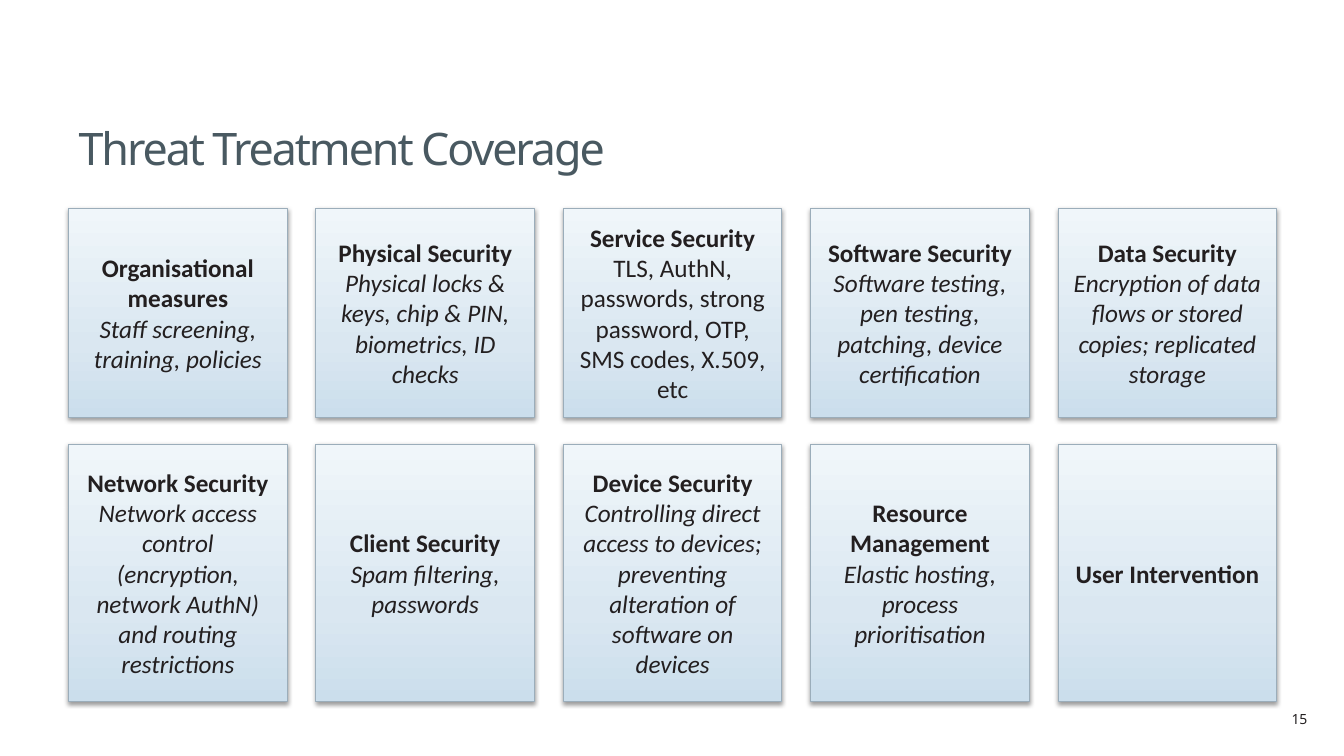
from copy import deepcopy

from lxml.etree import SubElement
from pptx import Presentation
from pptx.dml.color import RGBColor
from pptx.enum.shapes import MSO_SHAPE
from pptx.enum.text import MSO_ANCHOR, MSO_AUTO_SIZE, PP_ALIGN
from pptx.oxml.ns import qn
from pptx.util import Pt

# Heading, detail, whether the detail is italic
MEASURES = [
    [
        ("Organisational measures", "Staff screening, training, policies", True),
        ("Physical Security", "Physical locks & keys, chip & PIN, biometrics, ID checks", True),
        ("Service Security", "TLS, AuthN, passwords, strong password, OTP, SMS codes, X.509, etc", False),
        ("Software Security", "Software testing, pen testing, patching, device certification", True),
        ("Data Security", "Encryption of data flows or stored copies; replicated storage", True),
    ],
    [
        ("Network Security", "Network access control (encryption, network AuthN) and routing restrictions", True),
        ("Client Security", "Spam filtering, passwords", True),
        ("Device Security", "Controlling direct access to devices; preventing alteration of software on devices", True),
        ("Resource Management", "Elastic hosting, process prioritisation", True),
        ("User Intervention", "", False),
    ],
]
ROWS = [(149, 149), (317.5, 183.6)]  # top and height
LEFT, PITCH, CARD_WIDTH = 49, 176.7, 156.2


def colour(hex_string):
    return RGBColor.from_string(hex_string)


class ThreatSlide:
    HEADING_FONT, BODY_FONT = "Noto Sans", "Calibri"
    INK, TITLE_INK, OUTLINE = "231F20", "495961", "9BADBA"
    GRADIENT = [(0, "CBDEEC"), (0.35, "DAE7F1"), (1, "F0F6FA")]

    def __init__(self, presentation):
        self.slide = presentation.slides.add_slide(presentation.slide_layouts[5])

    def style(self, paragraph, name, size, ink, align, bold=False, italic=False):
        paragraph.alignment = align
        font = paragraph.font
        font.name, font.size, font.bold, font.italic = name, Pt(size), bold, italic
        font.color.rgb = colour(ink)

    def title(self, text, left, top, width, height):
        title = self.slide.shapes.title
        title.left, title.top, title.width, title.height = map(Pt, (left, top, width, height))
        frame = title.text_frame
        frame.text = text
        frame.auto_size = MSO_AUTO_SIZE.NONE
        frame.vertical_anchor = MSO_ANCHOR.BOTTOM
        heading = frame.paragraphs[0]
        self.style(heading, self.HEADING_FONT, 32, self.TITLE_INK, PP_ALIGN.LEFT)
        heading.runs[0].font._element.set("spc", "-150")

    def page_number(self, text, left, top, width, height):
        number = self.slide.shapes.add_textbox(*map(Pt, (left, top, width, height)))
        frame = number.text_frame
        frame.word_wrap = True
        frame.text = text
        self.style(frame.paragraphs[0], self.HEADING_FONT, 10, self.INK, PP_ALIGN.RIGHT)

    def card(self, heading, detail, italic, left, top, width, height):
        card = self.slide.shapes.add_shape(
            MSO_SHAPE.RECTANGLE, *map(Pt, (left, top, width, height)))
        card.line.color.rgb = colour(self.OUTLINE)
        card.line.width = Pt(0.75)
        self.shade(card)
        self.cast_shadow(card)

        frame = card.text_frame
        frame.word_wrap = True
        frame.vertical_anchor = MSO_ANCHOR.MIDDLE
        frame.text = f"{heading}\n{detail}" if detail else heading
        for index, paragraph in enumerate(frame.paragraphs):
            self.style(paragraph, self.BODY_FONT, 18, self.INK, PP_ALIGN.CENTER,
                       bold=index == 0, italic=italic and index > 0)

    def shade(self, card):
        card.fill.gradient()
        card.fill.gradient_angle = 90
        stop_list = card._element.spPr.find(".//" + qn("a:gsLst"))
        stop_list.append(deepcopy(stop_list[0]))
        for stop, (position, tint) in zip(card.fill.gradient_stops, self.GRADIENT):
            stop.position = position
            stop.color.rgb = colour(tint)

    def cast_shadow(self, card):
        card.shadow.inherit = False
        effects = card._element.spPr.find(qn("a:effectLst"))
        shadow = SubElement(effects, qn("a:outerShdw"), blurRad="40000",
                            dist="20000", dir="5400000", rotWithShape="0")
        black = SubElement(shadow, qn("a:srgbClr"), val="000000")
        SubElement(black, qn("a:alpha"), val="38000")


def main():
    presentation = Presentation()
    presentation.slide_width, presentation.slide_height = Pt(960), Pt(540)
    coverage = ThreatSlide(presentation)

    # Title and page number
    coverage.title("Threat Treatment Coverage", LEFT, 54.7, 854, 73.4)
    coverage.page_number("15", 865.4, 504, 75.6, 19.4)

    # Grid of security measures
    for (top, height), measures in zip(ROWS, MEASURES):
        for column, (heading, detail, italic) in enumerate(measures):
            coverage.card(heading, detail, italic,
                          LEFT + column * PITCH, top, CARD_WIDTH, height)

    presentation.save("out.pptx")


if __name__ == "__main__":
    main()
